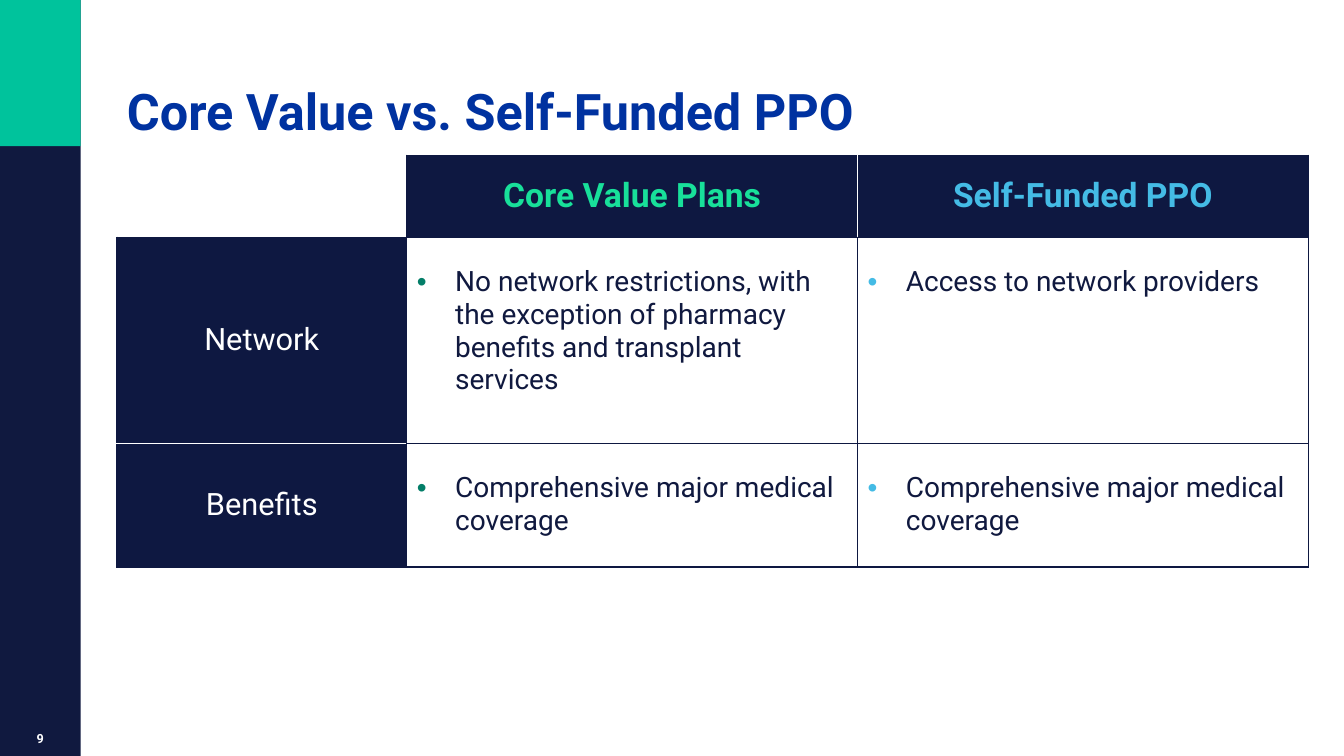
"""Build a slide comparing Core Value plans with the Self-Funded PPO."""
from dataclasses import dataclass

from lxml.etree import SubElement as Sub
from pptx import Presentation
from pptx.dml.color import RGBColor as RGB
from pptx.enum.shapes import MSO_SHAPE as SHAPE
from pptx.enum.text import MSO_ANCHOR as ANCHOR, PP_ALIGN as ALIGN
from pptx.oxml.ns import qn
from pptx.util import Pt

TITLE = "Core Value vs. Self-Funded PPO"
PAGE = "9"
ROWS = [
    ["", "Core Value Plans", "Self-Funded PPO"],
    ["Network",
     "No network restrictions, with the exception of pharmacy benefits and transplant services",
     "Access to network providers"],
    ["Benefits",
     "Comprehensive major medical coverage",
     "Comprehensive major medical coverage"],
]


@dataclass(frozen=True)
class Theme:
    """Colours, font and type sizes."""
    font: str = "Roboto"
    side: str = "10193F"
    teal: str = "00C39C"
    navy: str = "0E1841"
    white: str = "FFFFFF"
    blue: str = "0032A0"
    heads: tuple = ("18E09A", "44BBE5")
    dots: tuple = ("037E68", "44BBE5")
    title: int = 36
    head: int = 24
    label: int = 22
    body: int = 20
    page: int = 9


T = Theme()
WIDE, HIGH = 960, 540
BAR, BAND = 57.6, 104.4
LEFT, TOP = 83.5, 110.9
COLS = [207, 322, 322]
TALL = [58.5, 147.6, 88]
INDENT, PAD = 27.4, 20


def style(para, size, color, bold=False):
    """Set the font of a paragraph."""
    font = para.font
    font.name, font.size, font.bold = T.font, Pt(size), bold
    font.color.rgb = RGB.from_string(color)


def block(slide, high, color):
    """Draw one side block from the top edge."""
    rect = slide.shapes.add_shape(SHAPE.RECTANGLE, 0, 0, Pt(BAR), Pt(high))
    rect.shadow.inherit = False
    rect.fill.solid()
    rect.fill.fore_color.rgb = RGB.from_string(color)
    rect.line.fill.background()


def label(slide, box, text, anchor):
    """Add a text box and return its frame and paragraph."""
    frame = slide.shapes.add_textbox(*map(Pt, box)).text_frame
    frame.word_wrap = True
    frame.vertical_anchor = anchor
    para = frame.paragraphs[0]
    para.text = text
    return frame, para


def edge(cell, side, color):
    """Draw one border of a cell."""
    line = Sub(cell._tc.get_or_add_tcPr(), qn(f"a:ln{side}"), w=str(Pt(1)))
    Sub(Sub(line, qn("a:solidFill")), qn("a:srgbClr"), val=color)


def bullet(para, color):
    """Give a paragraph a coloured bullet and a hanging indent."""
    props = para._p.get_or_add_pPr()
    props.set("marL", str(Pt(INDENT)))
    props.set("indent", str(-Pt(INDENT)))
    Sub(Sub(props, qn("a:buClr")), qn("a:srgbClr"), val=color)
    Sub(props, qn("a:buFont"), typeface="Arial")
    Sub(props, qn("a:buChar"), char="•")


def fill(cell, row, col, text):
    """Fill one cell with its text, colours and borders."""
    pale = {(0, 1): "R", (0, 2): "L", (1, 0): "B", (2, 0): "T"}
    for side in "LRTB" if text else "RB":
        white = pale.get((row, col)) == side
        edge(cell, side, T.white if white else T.navy)
    if not text:
        cell.fill.background()
        return
    para = cell.text_frame.paragraphs[0]
    para.text = text
    if row and col:
        cell.fill.background()
        cell.margin_top = Pt(PAD)
        bullet(para, T.dots[col - 1])
        style(para, T.body, T.side)
        return
    cell.fill.solid()
    cell.fill.fore_color.rgb = RGB.from_string(T.navy)
    cell.vertical_anchor = ANCHOR.MIDDLE
    para.alignment = ALIGN.CENTER
    if col:
        style(para, T.head, T.heads[col - 1], True)
    else:
        style(para, T.label, T.white)


def grid(slide):
    """Add the comparison table."""
    box = LEFT, TOP, sum(COLS), sum(TALL)
    table = slide.shapes.add_table(len(TALL), len(COLS), *map(Pt, box)).table
    table.first_row = table.horz_banding = False
    for col, wide in zip(table.columns, COLS):
        col.width = Pt(wide)
    for row, high in zip(table.rows, TALL):
        row.height = Pt(high)
    for row, texts in enumerate(ROWS):
        for col, text in enumerate(texts):
            fill(table.cell(row, col), row, col, text)


def main():
    """Build and save the slide."""
    deck = Presentation()
    deck.slide_width, deck.slide_height = Pt(WIDE), Pt(HIGH)
    slide = deck.slides.add_slide(deck.slide_layouts[6])
    block(slide, HIGH, T.side)
    block(slide, BAND, T.teal)
    grid(slide)
    _, head = label(slide, (LEFT, 0, 830, BAND), TITLE, ANCHOR.BOTTOM)
    head.line_spacing = 0.9
    style(head, T.title, T.blue, True)
    frame, page = label(slide, (0, 515.5, BAR, 24.5), PAGE, ANCHOR.MIDDLE)
    frame.margin_left = frame.margin_right = 0
    page.alignment = ALIGN.CENTER
    style(page, T.page, T.white, True)
    deck.save("out.pptx")


if __name__ == "__main__":
    main()
